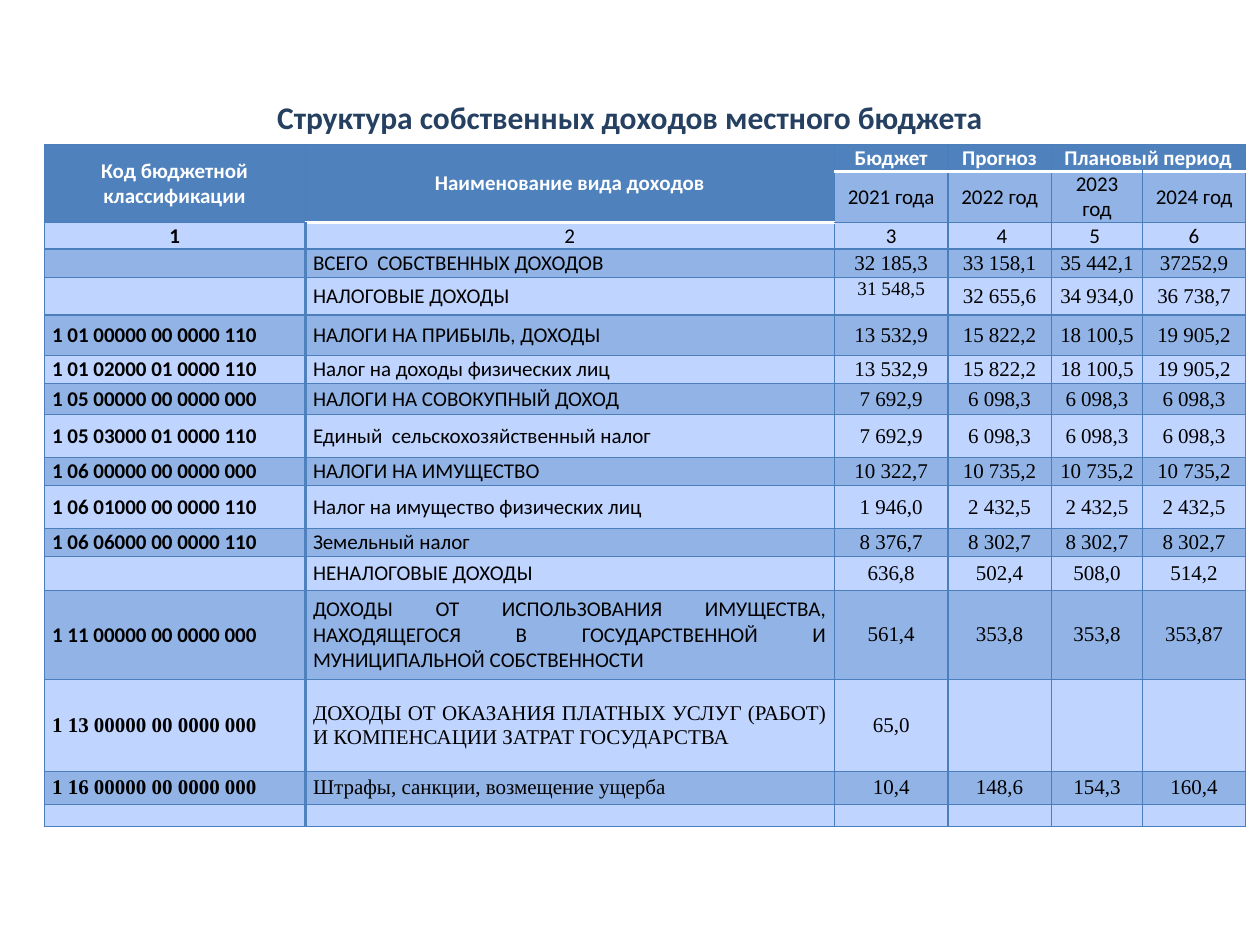
"""Build the slide on the structure of the local budget's own revenue."""
from typing import NamedTuple

from lxml.etree import SubElement
from pptx import Presentation
from pptx.dml.color import RGBColor
from pptx.enum.text import MSO_ANCHOR, PP_ALIGN
from pptx.oxml.ns import qn
from pptx.util import Cm, Pt

COLORS = {"title": "254061", "header": "4F81BD", "dark": "92B3E5", "light": "BFD4FF",
          "grid": "4B7EBC", "white": "FFFFFF", "black": "000000"}
SANS, SERIF = "Calibri", "Times New Roman"
COLUMN_WIDTHS = (5.26, 10.67, 2.29, 2.08, 1.85, 2.06)
HEADER_HEIGHTS = (0.53, 1.04, 0.53)
GROUPS = ("Код бюджетной классификации", "Наименование вида доходов",
          "Бюджет", "Прогноз", "Плановый период", "")
YEARS = ("", "", "2021 года", "2022 год", "2023 год", "2024 год")
NUMBERS = ("1", "2", "3", " 4", "5 ", "6")


class Income(NamedTuple):
    """One revenue line of the table."""
    height: float
    code: str
    name: str
    amounts: tuple[str, ...]
    label_font: str = SANS
    margin: float = 0.03


class Style(NamedTuple):
    """Look of the text in a cell."""
    font: str = SANS
    size: float = 12
    bold: bool = False
    color: str = "black"
    align: PP_ALIGN = PP_ALIGN.CENTER
    anchor: MSO_ANCHOR = MSO_ANCHOR.MIDDLE
    margin: float = 0.16


INCOMES = (
    Income(0.58, "", "ВСЕГО  СОБСТВЕННЫХ ДОХОДОВ",
           ("32 185,3", "33 158,1", "35 442,1", "37252,9"), margin=0.16),
    Income(0.75, "", "НАЛОГОВЫЕ ДОХОДЫ",
           ("31 548,5", "32 655,6", "34 934,0", "36 738,7"), margin=0.16),
    Income(0.82, "1 01 00000 00 0000 110", "НАЛОГИ НА ПРИБЫЛЬ, ДОХОДЫ",
           ("13 532,9", "15 822,2", "18 100,5", "19 905,2")),
    Income(0.56, "1 01 02000 01 0000 110", "Налог на доходы физических лиц",
           ("13 532,9", "15 822,2", "18 100,5", "19 905,2")),
    Income(0.63, "1 05 00000 00 0000 000", "НАЛОГИ НА СОВОКУПНЫЙ ДОХОД",
           ("7 692,9", "6 098,3", "6 098,3", "6 098,3")),
    Income(0.87, "1 05 03000 01 0000 110", "Единый  сельскохозяйственный налог",
           ("7 692,9", "6 098,3", "6 098,3", "6 098,3")),
    Income(0.56, "1 06 00000 00 0000 000", "НАЛОГИ НА ИМУЩЕСТВО",
           ("10 322,7", "10 735,2", "10 735,2", "10 735,2")),
    Income(0.86, "1 06 01000 00 0000 110", "Налог на имущество физических лиц",
           ("1 946,0", "2 432,5", "2 432,5", "2 432,5")),
    Income(0.56, "1 06 06000 00 0000 110", "Земельный налог",
           ("8 376,7", "8 302,7", "8 302,7", "8 302,7")),
    Income(0.69, "", "НЕНАЛОГОВЫЕ ДОХОДЫ", ("636,8", "502,4", "508,0", "514,2")),
    Income(1.8, "1 11 00000 00 0000 000",
           "ДОХОДЫ ОТ ИСПОЛЬЗОВАНИЯ ИМУЩЕСТВА, НАХОДЯЩЕГОСЯ В ГОСУДАРСТВЕННОЙ "
           "И МУНИЦИПАЛЬНОЙ СОБСТВЕННОСТИ", ("561,4", "353,8", "353,8", "353,87")),
    Income(1.85, "1 13 00000 00 0000 000",
           "ДОХОДЫ ОТ ОКАЗАНИЯ ПЛАТНЫХ УСЛУГ (РАБОТ) И КОМПЕНСАЦИИ ЗАТРАТ ГОСУДАРСТВА",
           ("65,0", "", "", ""), SERIF, 0.16),
    Income(0.66, "1 16 00000 00 0000 000", "Штрафы, санкции, возмещение ущерба",
           ("10,4", "148,6", "154,3", "160,4"), SERIF, 0.16),
    Income(0.46, "", "", ("", "", "", "")),
)


def rgb(name: str) -> RGBColor:
    """Look up a colour by its role."""
    return RGBColor.from_string(COLORS[name])


def write(paragraph, text: str, style: Style) -> None:
    """Put styled text into a paragraph."""
    paragraph.alignment = style.align
    paragraph.font.name, paragraph.font.size = style.font, Pt(style.size)
    paragraph.font.bold = style.bold
    paragraph.font.color.rgb = rgb(style.color)
    if text:
        paragraph.add_run().text = text
    else:
        paragraph._p.get_or_add_endParaRPr().set("sz", "1000")


def draw_borders(cell, row: int, column: int) -> None:
    """Outline a cell, with heavier rules under the header and beside the codes."""
    thin, rule, divider = ("grid", 0.75), ("white", 2), ("header", 2)

    def below(line: int) -> tuple[str, float]:
        """Choose the line that runs under the given row."""
        ruled = (line == 0 and column >= 2) or (line == 1 and column == 1)
        return rule if ruled else thin

    edges = {"lnL": divider if row >= 2 and column == 1 else thin,
             "lnR": divider if row >= 2 and column == 0 else thin,
             "lnT": below(row - 1), "lnB": below(row)}
    properties = cell._tc.get_or_add_tcPr()
    for edge, (color, width) in edges.items():
        line = SubElement(properties, qn(f"a:{edge}"), w=str(Pt(width)))
        SubElement(SubElement(line, qn("a:solidFill")), qn("a:srgbClr"), val=COLORS[color])


def fill_cell(table, row: int, column: int, text: str, fill: str, style: Style) -> None:
    """Give one cell its borders, fill and text."""
    cell = table.cell(row, column)
    draw_borders(cell, row, column)
    cell.fill.solid()
    cell.fill.fore_color.rgb = rgb(fill)
    cell.margin_left = cell.margin_right = Cm(style.margin)
    cell.margin_top = cell.margin_bottom = 0
    cell.vertical_anchor = style.anchor
    write(cell.text_frame.paragraphs[0], text, style)


def fill_header(table) -> None:
    """Write the three heading rows and merge their spans."""
    heading = Style(bold=True, color="white")
    for column, (group, year, number) in enumerate(zip(GROUPS, YEARS, NUMBERS)):
        anchor = MSO_ANCHOR.BOTTOM if column >= 3 else MSO_ANCHOR.MIDDLE
        fill_cell(table, 0, column, group, "header", heading._replace(anchor=anchor))
        fill_cell(table, 1, column, year, "dark" if year else "header", Style())
        fill_cell(table, 2, column, number, "light",
                  Style(bold=column == 0, anchor=MSO_ANCHOR.BOTTOM))
    for column in (0, 1):
        table.cell(0, column).merge(table.cell(1, column))
    table.cell(0, 4).merge(table.cell(0, 5))


def fill_income(table, row: int, income: Income) -> None:
    """Write one revenue line."""
    fill = "dark" if row % 2 else "light"
    label = Style(font=income.label_font, align=PP_ALIGN.JUSTIFY)
    fill_cell(table, row, 0, income.code, fill, label._replace(bold=True))
    fill_cell(table, row, 1, income.name, fill, label)
    for column, amount in enumerate(income.amounts, 2):
        style = Style(font=SERIF, margin=income.margin)
        if amount == "31 548,5":
            style = style._replace(size=11, anchor=MSO_ANCHOR.TOP, margin=0.18)
        fill_cell(table, row, column, amount, fill, style)


def main() -> None:
    """Build and save the presentation."""
    deck = Presentation()
    deck.slide_width, deck.slide_height = Cm(25.4), Cm(19.05)
    slide = deck.slides.add_slide(deck.slide_layouts[5])

    title = slide.shapes.title
    title.left, title.top, title.width, title.height = Cm(1.27), Cm(0.76), Cm(22.86), Cm(3.18)
    title.text_frame.vertical_anchor = MSO_ANCHOR.MIDDLE
    write(title.text_frame.paragraphs[0], "Структура собственных доходов местного бюджета",
          Style(size=18, bold=True, color="title"))

    heights = (*HEADER_HEIGHTS, *(income.height for income in INCOMES))
    table = slide.shapes.add_table(len(heights), len(COLUMN_WIDTHS), Cm(0.89), Cm(2.92),
                                   Cm(sum(COLUMN_WIDTHS)), Cm(sum(heights))).table
    table.first_row = table.horz_banding = False
    for column, width in zip(table.columns, COLUMN_WIDTHS):
        column.width = Cm(width)
    for row, height in zip(table.rows, heights):
        row.height = Cm(height)
    fill_header(table)
    for row, income in enumerate(INCOMES, len(HEADER_HEIGHTS)):
        fill_income(table, row, income)
    deck.save("out.pptx")


if __name__ == "__main__":
    main()
